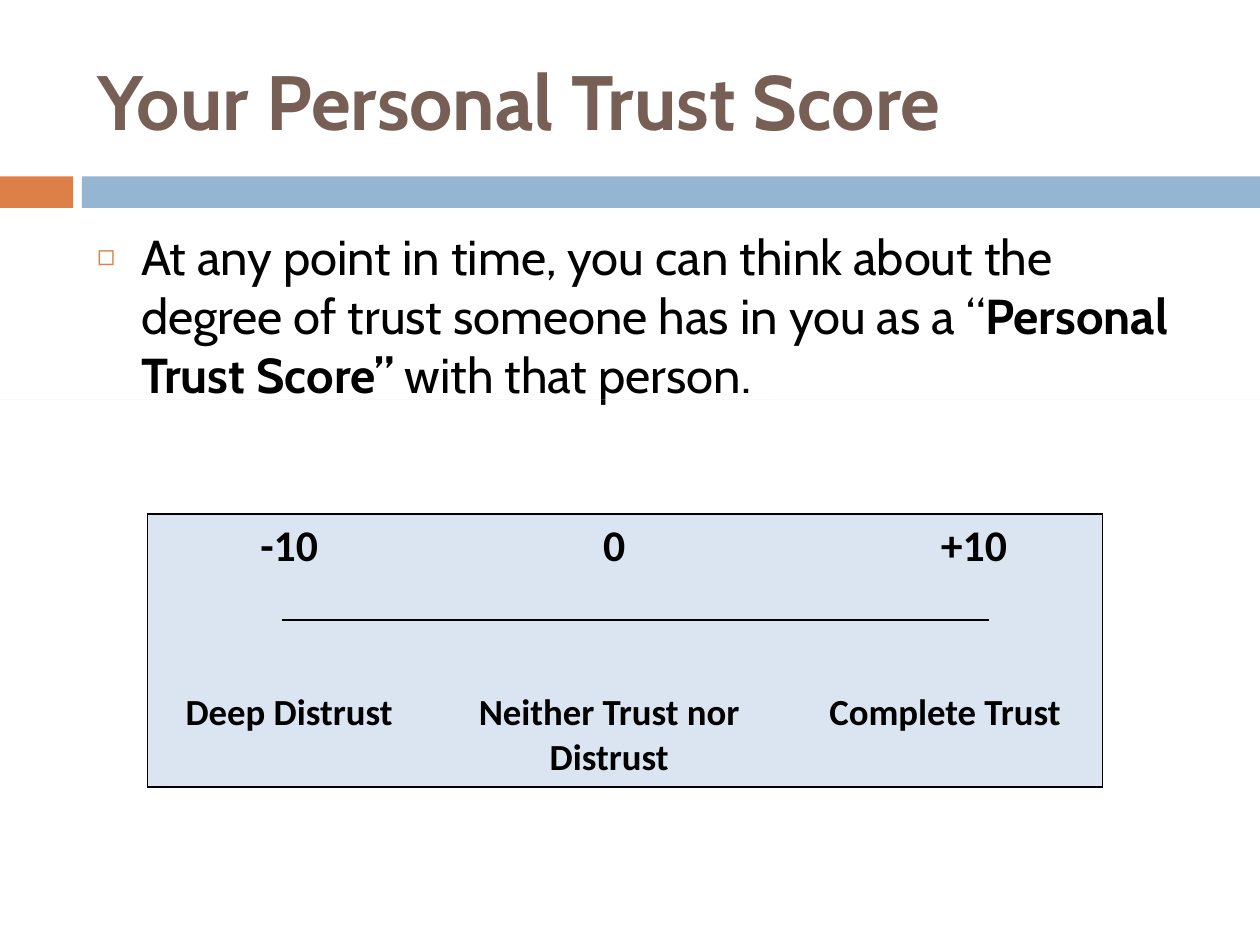
from dataclasses import dataclass

from lxml import etree
from pptx import Presentation
from pptx import util as u
from pptx.dml.color import RGBColor
from pptx.enum import shapes, text
from pptx.oxml import ns

WIDTH, HEIGHT = 10, 7.5
BLACK, ORANGE, BLUE, BROWN, PALE = "000000", "DD8047", "94B6D2", "775F55", "DBE5F1"
MARGIN = 0.067 * WIDTH
CONTENT_WIDTH = 0.892 * WIDTH
COLUMNS = (2.25, 2.83, 2.5)
ROWS = (0.52, 0.83, 0.8)
TABLE_LEFT, TABLE_TOP = 1.17, 4.08


@dataclass
class Bar:
    left: float
    top: float
    width: float
    height: float
    color: str


@dataclass
class Label:
    row: int
    column: int
    words: str
    size: float
    indent: float = 0


BARS = (
    Bar(0, 1.4, 0.58, 0.25, ORANGE),
    Bar(0.65, 1.4, WIDTH - 0.65, 0.25, BLUE),
    Bar(0, 3.17, WIDTH, 0, PALE),
    Bar(0, 3.17, 6.12, 0, PALE),
)
LABELS = (
    Label(0, 0, "-10", 25),
    Label(0, 1, "0", 25, 0.08),
    Label(0, 2, "+10", 25, 0.46),
    Label(2, 0, "Deep Distrust", 21),
    Label(2, 1, "Neither Trust nor Distrust", 21),
    Label(2, 2, "Complete Trust", 21),
)


def rgb(color: str) -> RGBColor:
    return RGBColor.from_string(color)


def place(shape, left: float, top: float, width: float, height: float) -> None:
    shape.left, shape.top = u.Inches(left), u.Inches(top)
    shape.width, shape.height = u.Inches(width), u.Inches(height)


def add_span(para, words: str, size: float, font: str, color: str = BLACK, bold: bool = False) -> None:
    span = para.add_run()
    span.text = words
    span.font.size, span.font.name, span.font.bold = u.Pt(size), font, bold
    span.font.color.rgb = rgb(color)


def add_node(parent, tag: str, **attributes: str):
    return etree.SubElement(parent, ns.qn(tag), attributes)


def add_bar(page, bar: Bar) -> None:
    shape = page.shapes.add_shape(
        shapes.MSO_SHAPE.RECTANGLE,
        *map(u.Inches, (bar.left, bar.top, bar.width, bar.height)))
    shape.shadow.inherit = False
    shape.fill.solid()
    shape.fill.fore_color.rgb = rgb(bar.color)
    shape.line.fill.background()


def add_title(page) -> None:
    title = page.shapes.title
    place(title, MARGIN, 0.25, CONTENT_WIDTH, 1.08)
    title.text_frame.vertical_anchor = text.MSO_ANCHOR.MIDDLE
    para = title.text_frame.paragraphs[0]
    para.alignment = text.PP_ALIGN.LEFT
    add_span(para, "Your Personal Trust Score", 44, "Cabin", BROWN, True)


def add_body(page) -> None:
    body = page.placeholders[1]
    place(body, MARGIN, 1.75, CONTENT_WIDTH, 4.92)
    para = body.text_frame.paragraphs[0]
    para.space_before = u.Pt(7)
    add_span(para, "At any point in time, you can think about the degree of trust "
                   "someone has in you as a “", 28, "Cabin")
    add_span(para, "Personal Trust Score”", 28, "Cabin", bold=True)
    add_span(para, " with that person.", 28, "Cabin")
    properties = para._p.get_or_add_pPr()
    properties.set("marL", str(u.Inches(0.35)))
    properties.set("indent", str(-u.Inches(0.35)))
    add_node(add_node(properties, "a:buClr"), "a:srgbClr", val=ORANGE)
    add_node(properties, "a:buSzPct", val="60000")
    add_node(properties, "a:buChar", char="◻")


def set_borders(cell, edges: dict[str, bool]) -> None:
    """Draw the edges marked True and hide the others."""
    properties = cell._tc.get_or_add_tcPr()
    for position, (side, visible) in enumerate(edges.items()):
        line = etree.Element(ns.qn(f"a:ln{side}"), {"w": str(u.Pt(1))})
        if visible:
            add_node(add_node(line, "a:solidFill"), "a:srgbClr", val=BLACK)
        else:
            add_node(line, "a:noFill")
        properties.insert(position, line)


def add_scale_table(page) -> None:
    frame = page.shapes.add_table(
        len(ROWS), len(COLUMNS),
        *map(u.Inches, (TABLE_LEFT, TABLE_TOP, sum(COLUMNS), sum(ROWS))))
    table = frame.table
    for column, width in zip(table.columns, COLUMNS):
        column.width = u.Inches(width)
    for row, height in zip(table.rows, ROWS):
        row.height = u.Inches(height)
    table.cell(1, 0).merge(table.cell(1, len(COLUMNS) - 1))
    for r in range(len(ROWS)):
        for c in range(len(COLUMNS)):
            cell = table.cell(r, c)
            cell.fill.solid()
            cell.fill.fore_color.rgb = rgb(PALE)
            set_borders(cell, {
                "L": c == 0,
                "R": c == len(COLUMNS) - 1 or cell.is_merge_origin,
                "T": r == 0,
                "B": r == len(ROWS) - 1,
            })
    for label in LABELS:
        cell = table.cell(label.row, label.column)
        cell.margin_left = u.Inches(0.1 + label.indent)
        cell.vertical_anchor = text.MSO_ANCHOR.TOP if label.row else text.MSO_ANCHOR.BOTTOM
        para = cell.text_frame.paragraphs[0]
        para.alignment = text.PP_ALIGN.CENTER
        add_span(para, label.words, label.size, "Calibri", bold=True)


def add_scale_line(page) -> None:
    line = page.shapes.add_connector(
        shapes.MSO_CONNECTOR.STRAIGHT, *map(u.Inches, (2.24, 4.92, 7.85, 4.92)))
    line.line.color.rgb = rgb(BLACK)
    line.line.width = u.Pt(0.75)
    add_node(line._element.spPr, "a:effectLst")


def main() -> None:
    deck = Presentation()
    deck.slide_width, deck.slide_height = u.Inches(WIDTH), u.Inches(HEIGHT)
    page = deck.slides.add_slide(deck.slide_layouts[1])
    add_title(page)
    add_body(page)
    for bar in BARS:
        add_bar(page, bar)
    add_scale_table(page)
    add_scale_line(page)
    deck.save("out.pptx")


if __name__ == "__main__":
    main()
